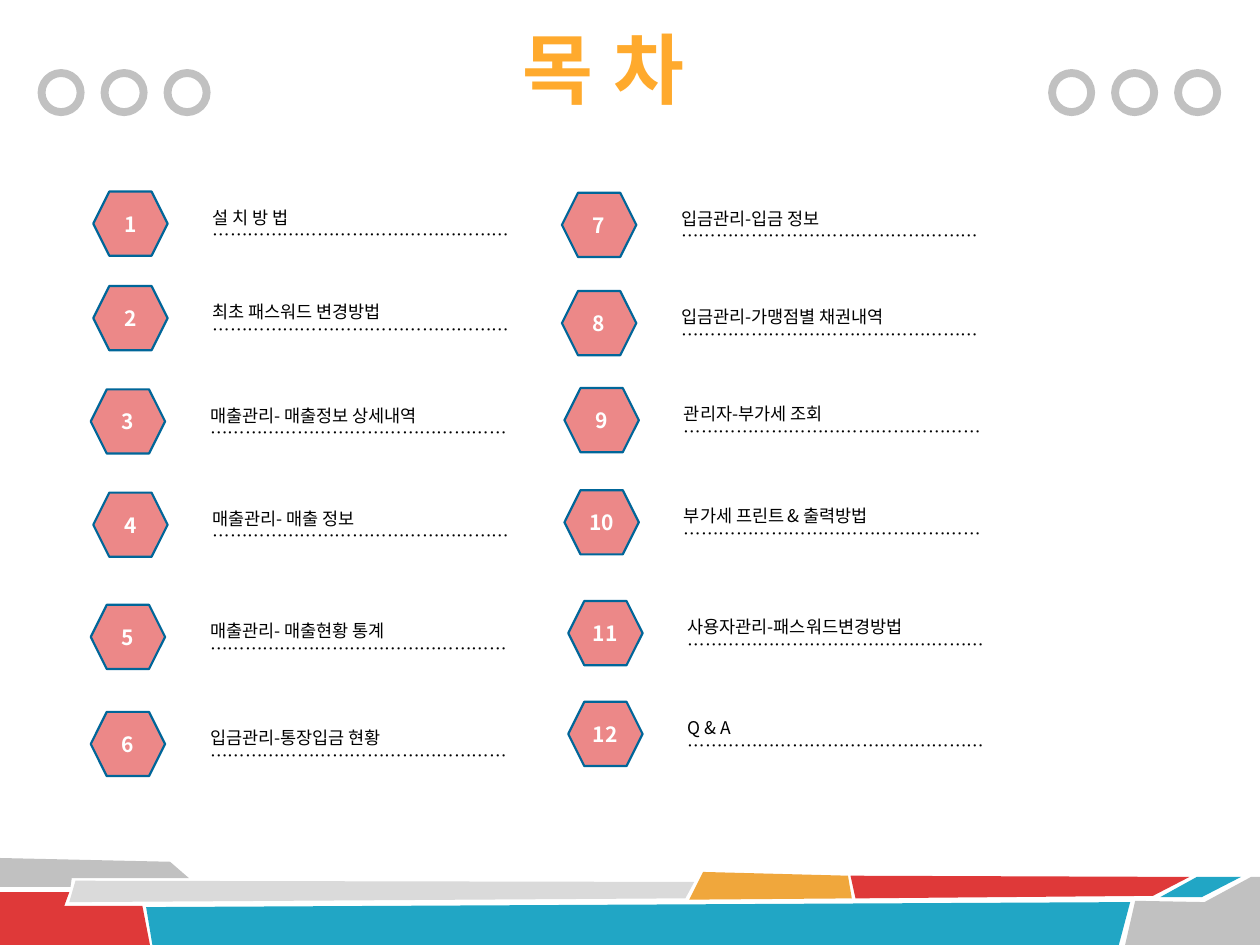
from dataclasses import dataclass

from lxml import etree
from pptx import Presentation
from pptx.dml.color import RGBColor
from pptx.enum.shapes import MSO_SHAPE
from pptx.enum.text import MSO_ANCHOR, PP_ALIGN
from pptx.oxml.ns import qn
from pptx.util import Inches, Pt

HEXAGON = MSO_SHAPE.HEXAGON
OVAL = MSO_SHAPE.OVAL
MIDDLE = MSO_ANCHOR.MIDDLE
LEFT = PP_ALIGN.LEFT
CENTER = PP_ALIGN.CENTER


@dataclass(frozen=True)
class Theme:
    font: str = "Noto Sans CJK KR"
    title: str = "FFAA2D"
    text: str = "000000"
    white: str = "FFFFFF"
    hexagon: str = "EC8888"
    outline: str = "006699"
    gray: str = "C1C1C1"
    light: str = "DADADA"
    red: str = "DF3939"
    teal: str = "21A6C5"
    orange: str = "F0A73C"
    title_size: int = 44
    number_size: int = 12
    entry_size: int = 10
    line_spacing: float = 0.83


@dataclass(frozen=True)
class Band:
    color: str
    points: tuple[tuple[float, float], ...]


@dataclass(frozen=True)
class Entry:
    left: float
    top: float
    text: str


T = Theme()
LEADER = "……………………………………………"

BANDS = (
    Band(T.gray, ((0, 6.81), (1.35, 6.84), (1.5, 6.97), (0.57, 6.97),
                  (0.56, 7.04), (0, 7.04))),
    Band(T.red, ((0, 7.08), (0.55, 7.08), (0.51, 7.19), (1.13, 7.19),
                 (1.19, 7.5), (0, 7.5))),
    Band(T.light, ((0.6, 6.99), (5.51, 7), (5.44, 7.13), (0.55, 7.16))),
    Band(T.teal, ((1.16, 7.2), (8.97, 7.16), (8.88, 7.5), (1.21, 7.5))),
    Band(T.orange, ((5.58, 6.92), (6.73, 6.95), (6.76, 7.13), (5.47, 7.14))),
    Band(T.red, ((6.75, 6.95), (9.44, 6.96), (9.15, 7.11), (6.79, 7.13))),
    Band(T.teal, ((9.5, 6.96), (9.85, 6.96), (9.54, 7.12), (9.21, 7.12))),
    Band(T.gray, ((9.01, 7.15), (9.56, 7.16), (9.93, 6.96), (10, 6.96),
                  (10, 7.5), (8.93, 7.5))),
)

ENTRIES = (
    Entry(0.74, 1.52, "설 치 방 법"),
    Entry(0.74, 2.27, "최초 패스워드 변경방법"),
    Entry(0.72, 3.09, "매출관리- 매출정보 상세내역"),
    Entry(0.74, 3.91, "매출관리- 매출 정보"),
    Entry(0.72, 4.8, "매출관리- 매출현황 통계"),
    Entry(0.72, 5.65, "입금관리-통장입금 현황"),
    Entry(4.46, 1.53, "입금관리-입금 정보"),
    Entry(4.46, 2.31, "입금관리-가맹점별 채권내역"),
    Entry(4.48, 3.08, "관리자-부가세 조회"),
    Entry(4.48, 3.89, "부가세 프린트 & 출력방법"),
    Entry(4.51, 4.77, "사용자관리-패스워드변경방법"),
    Entry(4.51, 5.57, "Q & A"),
)


def rgb(color: str) -> RGBColor:
    return RGBColor.from_string(color)


def write(tf, lines: tuple[str, ...], size: int, color: str,
          bold: bool = False, align=LEFT, spacing: float = 1.0) -> None:
    font_format = {"name": T.font, "size": Pt(size), "bold": bold}
    for i, line in enumerate(lines):
        p = tf.paragraphs[0] if i == 0 else tf.add_paragraph()
        p.alignment = align
        p.line_spacing = spacing
        r = p.add_run()
        r.text = line
        for name, value in font_format.items():
            setattr(r.font, name, value)
        r.font.color.rgb = rgb(color)
        ea = etree.SubElement(r._r.get_or_add_rPr(), qn("a:ea"))
        ea.set("typeface", T.font)


def add_text(shapes, left: float, top: float, width: float, height: float,
             lines: tuple[str, ...], size: int, color: str, **style):
    sp = shapes.add_textbox(Inches(left), Inches(top),
                            Inches(width), Inches(height))
    sp.text_frame.word_wrap = True
    write(sp.text_frame, lines, size, color, spacing=T.line_spacing, **style)
    return sp


def add_band(shapes, band: Band) -> None:
    points = [(Inches(x), Inches(y)) for x, y in band.points]
    builder = shapes.build_freeform(*points[0])
    builder.add_line_segments(points[1:], close=True)
    sp = builder.convert_to_shape()
    sp.shadow.inherit = False
    sp.fill.solid()
    sp.fill.fore_color.rgb = rgb(band.color)
    sp.line.fill.background()


def add_ring(shapes, left: float) -> None:
    sp = shapes.add_shape(OVAL, Inches(left), Inches(0.58),
                          Inches(0.31), Inches(0.31))
    sp.shadow.inherit = False
    sp.fill.background()
    sp.line.color.rgb = rgb(T.gray)
    sp.line.width = Pt(4.5)


def add_entry(shapes, number: int, entry: Entry) -> None:
    group = shapes.add_group_shape().shapes
    sp = group.add_shape(HEXAGON, Inches(entry.left), Inches(entry.top),
                         Inches(0.59), Inches(0.51))
    sp.shadow.inherit = False
    sp.fill.solid()
    sp.fill.fore_color.rgb = rgb(T.hexagon)
    sp.line.color.rgb = rgb(T.outline)
    sp.line.width = Pt(1.25)
    tf = sp.text_frame
    tf.word_wrap = False
    tf.vertical_anchor = MIDDLE
    write(tf, (str(number),), T.number_size, T.white, bold=True, align=CENTER)
    add_text(group, entry.left + 0.85, entry.top + 0.1, 4.98, 0.44,
             (entry.text, LEADER), T.entry_size, T.text)


def main() -> None:
    prs = Presentation()
    prs.slide_width = Inches(10)
    prs.slide_height = Inches(7.5)
    s = prs.slides.add_slide(prs.slide_layouts[6])
    for band in BANDS:
        add_band(s.shapes, band)
    for start in (0.33, 8.35):
        for i in range(3):
            add_ring(s.shapes, start + 0.5 * i)
    for number, entry in enumerate(ENTRIES, 1):
        add_entry(s.shapes, number, entry)
    title = add_text(s.shapes, 3.82, 0.25, 1.94, 0.84, ("목 차",),
                     T.title_size, T.title, bold=True, align=CENTER)
    r = title.text_frame.paragraphs[0].runs[0]
    r._r.get_or_add_rPr().set("spc", "50")
    prs.save("out.pptx")


if __name__ == "__main__":
    main()
